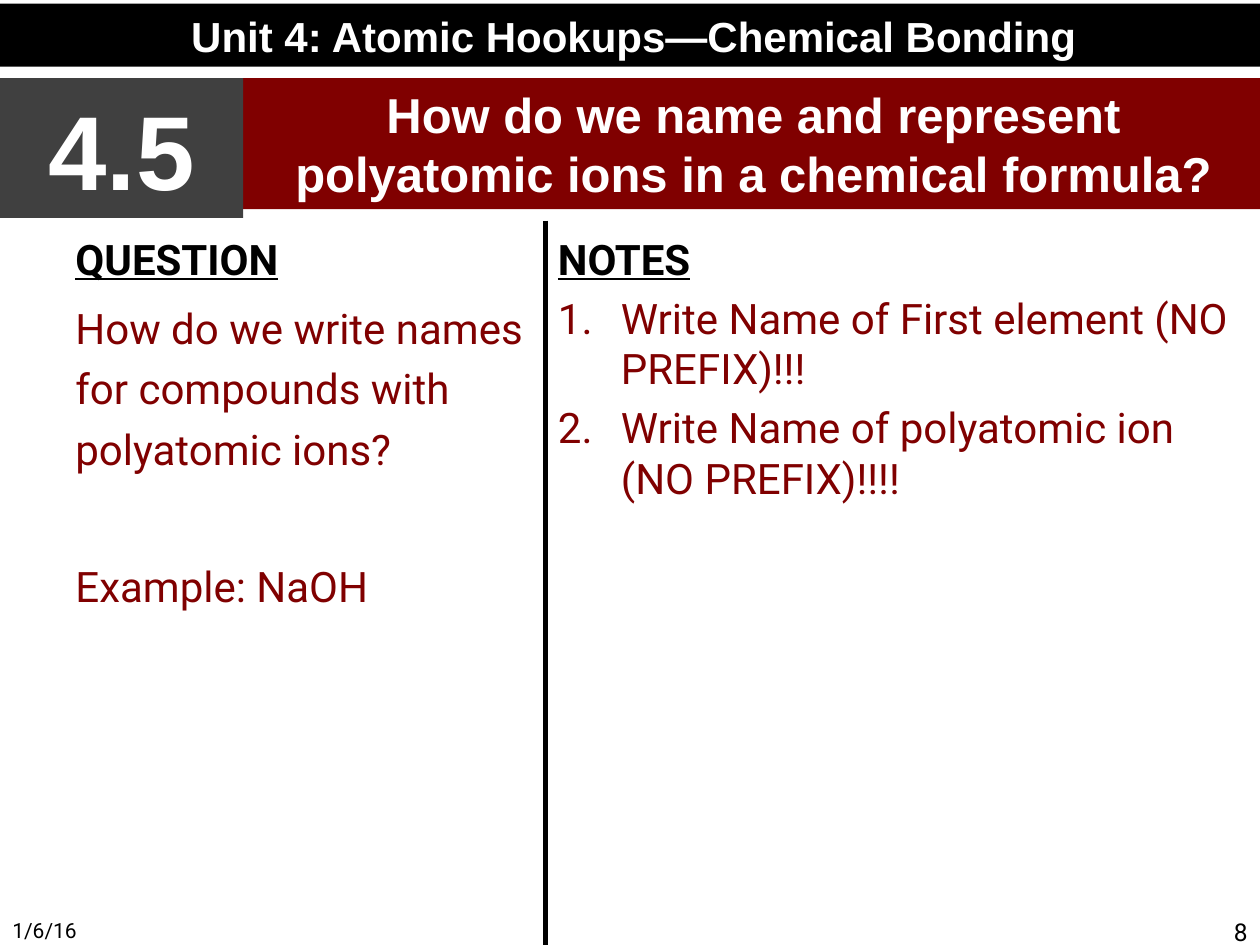
from dataclasses import dataclass

from lxml import etree
from pptx import Presentation
from pptx.dml.color import RGBColor
from pptx.enum.shapes import MSO_CONNECTOR, MSO_SHAPE
from pptx.enum.text import MSO_ANCHOR, MSO_AUTO_SIZE, PP_ALIGN
from pptx.oxml.ns import qn
from pptx.util import Inches, Pt

LEFT, CENTER, RIGHT = PP_ALIGN.LEFT, PP_ALIGN.CENTER, PP_ALIGN.RIGHT
BLACK, WHITE, GRAY, MAROON = "000000", "FFFFFF", "404040", "800000"
HEADING_FONT, BODY_FONT = "Arial", "Roboto"
TITLE_ONLY = 5
DIVIDER_X = 4.33
COLUMN_TOP, COLUMN_HEIGHT = 1.8, 4.95
FOOTER_TOP, FOOTER_WIDTH, FOOTER_HEIGHT = 7.23, 2.33, 0.27


@dataclass
class Box:
    left: float
    top: float
    width: float
    height: float


@dataclass
class Line:
    text: str
    size: float = 24
    color: str = MAROON
    font: str = BODY_FONT
    bold: bool = False
    underline: bool = False
    align: PP_ALIGN = LEFT
    space_before: float = 0
    line_spacing: float = 1
    numbered: bool = False


@dataclass
class Banner:
    box: Box
    text: str
    size: float
    fill: str


UNIT_BANNER = Banner(Box(0, 0.03, 10.06, 0.5),
                     "Unit 4: Atomic Hookups—Chemical Bonding", 24, BLACK)
SECTION_BANNER = Banner(Box(0, 0.62, 1.93, 1.11), "4.5", 60, GRAY)
TITLE_BANNER = Banner(
    Box(1.93, 0.62, 8.1, 1.04),
    "How do we name and represent polyatomic ions in a chemical formula?",
    28, MAROON)

QUESTION_LINES = [
    Line("QUESTION", color=BLACK, bold=True, underline=True),
    Line("How do we write names for compounds with polyatomic ions?",
         space_before=5, line_spacing=1.2),
    Line("Example: NaOH", space_before=44, line_spacing=1.2),
]
NOTES_LINES = [
    Line("NOTES", color=BLACK, bold=True, underline=True),
    Line("Write Name of First element (NO PREFIX)!!!",
         space_before=5, numbered=True),
    Line("Write Name of polyatomic ion (NO PREFIX)!!!!",
         space_before=5, numbered=True),
]
TEXT_BLOCKS = [
    (Box(0.5, COLUMN_TOP, 3.92, COLUMN_HEIGHT), QUESTION_LINES),
    (Box(DIVIDER_X, COLUMN_TOP, 10 - DIVIDER_X, COLUMN_HEIGHT), NOTES_LINES),
    (Box(0, FOOTER_TOP, FOOTER_WIDTH, FOOTER_HEIGHT),
     [Line("1/6/16", size=12, color=BLACK)]),
    (Box(10 - FOOTER_WIDTH, FOOTER_TOP, FOOTER_WIDTH, FOOTER_HEIGHT),
     [Line("8", size=14, color=BLACK, align=RIGHT)]),
]


def rgb(color: str) -> RGBColor:
    return RGBColor.from_string(color)


def lengths(box: Box) -> list:
    return [Inches(value) for value in (box.left, box.top, box.width, box.height)]


def add_numbering(paragraph) -> None:
    properties = paragraph._p.get_or_add_pPr()
    properties.set("marL", str(Inches(0.5)))
    properties.set("indent", str(Inches(-0.5)))
    etree.SubElement(properties, qn("a:buFont"), typeface="+mj-lt")
    etree.SubElement(properties, qn("a:buAutoNum"), type="arabicPeriod")


def write_lines(text_frame, lines: list[Line]) -> None:
    text_frame.word_wrap = True
    text_frame.auto_size = MSO_AUTO_SIZE.NONE
    for index, line in enumerate(lines):
        paragraph = text_frame.add_paragraph() if index else text_frame.paragraphs[0]
        paragraph.text = line.text
        if line.numbered:
            add_numbering(paragraph)
        paragraph.alignment = line.align
        paragraph.space_before = Pt(line.space_before)
        paragraph.line_spacing = line.line_spacing
        font = paragraph.font
        font.name = line.font
        font.size = Pt(line.size)
        font.bold = line.bold
        font.underline = line.underline
        font.color.rgb = rgb(line.color)


def format_banner(shape, banner: Banner) -> None:
    shape.left, shape.top, shape.width, shape.height = lengths(banner.box)
    shape.fill.solid()
    shape.fill.fore_color.rgb = rgb(banner.fill)
    shape.line.fill.background()
    shape.text_frame.vertical_anchor = MSO_ANCHOR.MIDDLE
    write_lines(shape.text_frame, [
        Line(banner.text, banner.size, WHITE, HEADING_FONT, bold=True, align=CENTER)])


def add_banner(slide, banner: Banner) -> None:
    shape = slide.shapes.add_shape(MSO_SHAPE.RECTANGLE, *lengths(banner.box))
    shape.shadow.inherit = False
    format_banner(shape, banner)


def add_text(slide, box: Box, lines: list[Line]) -> None:
    write_lines(slide.shapes.add_textbox(*lengths(box)).text_frame, lines)


def add_divider(slide) -> None:
    divider = slide.shapes.add_connector(
        MSO_CONNECTOR.STRAIGHT, Inches(DIVIDER_X), Inches(1.75),
        Inches(DIVIDER_X), Inches(7.5))
    divider.line.color.rgb = rgb(BLACK)
    divider.line.width = Pt(3)
    etree.SubElement(divider._element.spPr, qn("a:effectLst"))


def main() -> None:
    presentation = Presentation()
    presentation.slide_width = Inches(10)
    presentation.slide_height = Inches(7.5)
    slide = presentation.slides.add_slide(presentation.slide_layouts[TITLE_ONLY])
    format_banner(slide.shapes.title, TITLE_BANNER)
    for banner in (UNIT_BANNER, SECTION_BANNER):
        add_banner(slide, banner)
    add_divider(slide)
    for box, lines in TEXT_BLOCKS:
        add_text(slide, box, lines)
    presentation.save("out.pptx")


if __name__ == "__main__":
    main()
